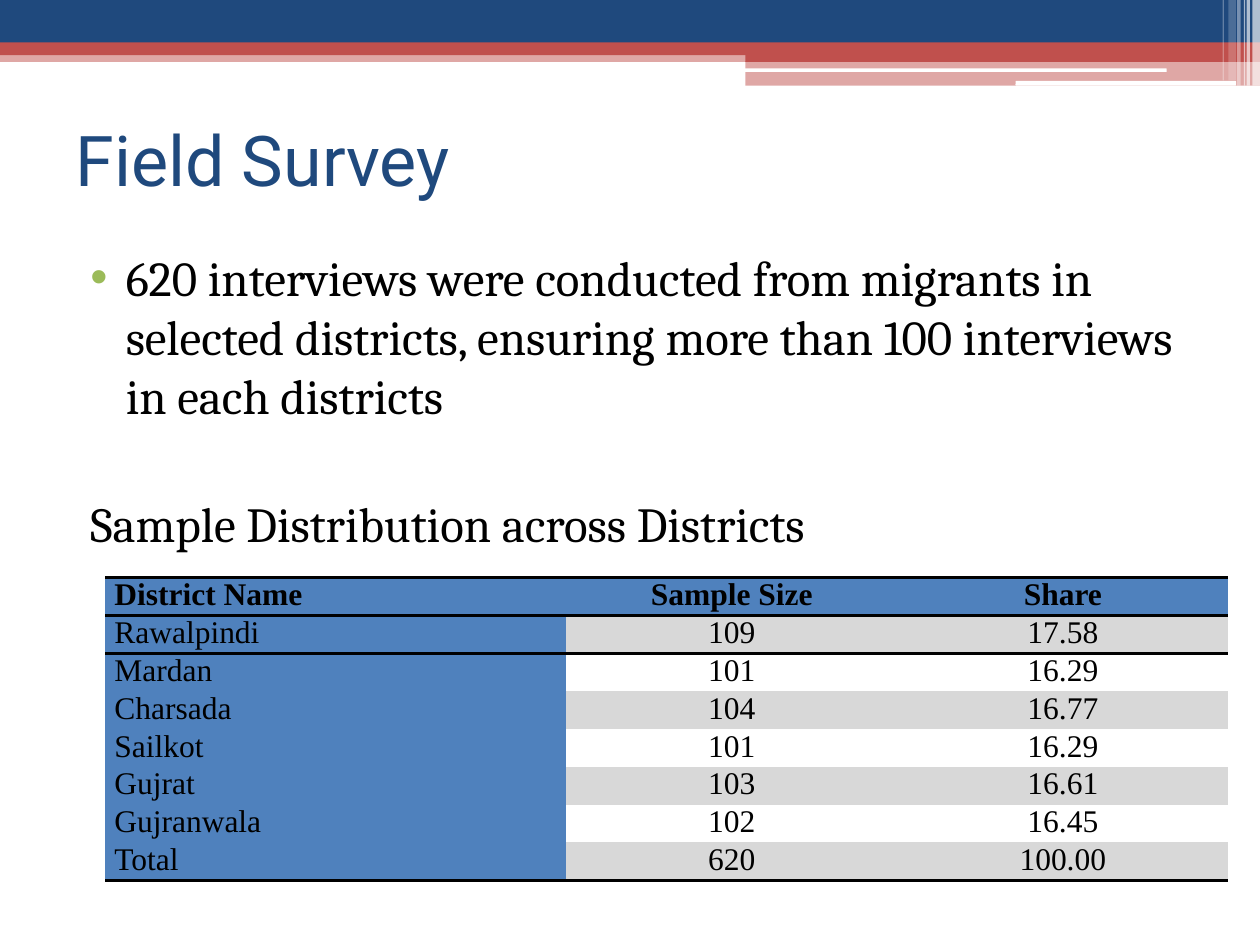
from dataclasses import dataclass

from lxml.etree import SubElement
from pptx import Presentation
from pptx.dml.color import RGBColor
from pptx.enum.shapes import MSO_SHAPE as Preset
from pptx.enum.text import MSO_ANCHOR as Anchor, PP_ALIGN as Align
from pptx.oxml.ns import qn
from pptx.util import Pt

NAVY, RED, BLUE = "1F497D", "C0504D", "4F81BD"
WHITE, BLACK, GREY, GREEN = "FFFFFF", "000000", "D8D8D8", "9BBB59"
PLAIN_TABLE = "{2D5ABB26-0587-4C30-8999-92F81FD0307C}"


def rgb(value):
    return RGBColor.from_string(value)


def points(*lengths):
    return [Pt(length) for length in lengths]


@dataclass
class SurveySlide:
    slide: object
    heading_font: str = "Roboto"
    body_font: str = "Cambria"
    table_font: str = "Times New Roman"

    def run(self, paragraph, text, font, size, color=BLACK, bold=False):
        run = paragraph.add_run()
        run.text = text
        run.font.name = font
        run.font.size = Pt(size)
        run.font.bold = bold
        run.font.color.rgb = rgb(color)

    def title(self, text, box):
        heading = self.slide.shapes.title
        heading.left, heading.top, heading.width, heading.height = points(*box)
        frame = heading.text_frame
        frame.vertical_anchor = Anchor.MIDDLE
        frame.paragraphs[0].alignment = Align.LEFT
        self.run(frame.paragraphs[0], text, self.heading_font, 40, NAVY)

    def bar(self, box, color, opacity=100, preset=Preset.RECTANGLE):
        bar = self.slide.shapes.add_shape(preset, *points(*box))
        bar.shadow.inherit = False
        bar.line.fill.background()
        bar.fill.solid()
        bar.fill.fore_color.rgb = rgb(color)
        if opacity < 100:
            tint = bar._element.spPr.find(".//" + qn("a:srgbClr"))
            SubElement(tint, qn("a:alpha"), val=str(opacity * 1000))

    def body(self, items, box):
        frame = self.slide.shapes.add_textbox(*points(*box)).text_frame
        frame.word_wrap = True
        for index, (text, space_before, bulleted) in enumerate(items):
            paragraph = frame.add_paragraph() if index else frame.paragraphs[0]
            paragraph.space_before = Pt(space_before)
            self.run(paragraph, text, self.body_font, 28)
            layout = paragraph._p.get_or_add_pPr()
            layout.set("marL", str(Pt(28.8)))
            layout.set("indent", str(Pt(-20.16)))
            if bulleted:
                bullet_color = SubElement(layout, qn("a:buClr"))
                SubElement(bullet_color, qn("a:srgbClr"), val=GREEN)
                SubElement(layout, qn("a:buFont"), typeface="Arial")
                SubElement(layout, qn("a:buChar"), char="•")

    def rule(self, cell, side):
        edge = SubElement(cell._tc.get_or_add_tcPr(), qn("a:ln" + side), w=str(Pt(2.25)))
        fill = SubElement(edge, qn("a:solidFill"))
        SubElement(fill, qn("a:srgbClr"), val=BLACK)

    def table(self, rows, left, top, widths, row_height):
        frame = self.slide.shapes.add_table(
            len(rows), len(widths),
            *points(left, top, sum(widths), row_height * len(rows)))
        grid = frame.table
        grid.first_row = grid.horz_banding = False
        grid._tbl.tblPr.find(qn("a:tableStyleId")).text = PLAIN_TABLE
        for column, width in zip(grid.columns, widths):
            column.width = Pt(width)
        last = len(rows) - 1
        for r, values in enumerate(rows):
            grid.rows[r].height = Pt(row_height)
            for c, value in enumerate(values):
                cell = grid.cell(r, c)
                cell.margin_left = cell.margin_right = Pt(5.4)
                cell.margin_top = cell.margin_bottom = 0
                if r in (0, 1):
                    self.rule(cell, "T")
                if r in (0, last):
                    self.rule(cell, "B")
                if r == 0 or c == 0:
                    shade = BLUE
                else:
                    shade = GREY if r % 2 else None
                if shade:
                    cell.fill.solid()
                    cell.fill.fore_color.rgb = rgb(shade)
                else:
                    cell.fill.background()
                paragraph = cell.text_frame.paragraphs[0]
                paragraph.alignment = Align.CENTER if c else Align.LEFT
                self.run(paragraph, value, self.table_font, 18, bold=r == 0)


def main():
    deck = Presentation()
    deck.slide_width, deck.slide_height = points(720, 540)
    survey = SurveySlide(deck.slides.add_slide(deck.slide_layouts[5]))

    for box, color, opacity in [
        ((0, 28.8, 720, 6.6), RED, 50),
        ((0, 0, 720, 24.5), NAVY, 100),
        ((0, 24.3, 720, 7.2), RED, 100),
        ((426, 28.2, 294, 7.2), RED, 100),
        ((426, 35, 294, 14), RED, 50),
    ]:
        survey.bar(box, color, opacity)

    for box in [(425.5, 39.1, 241.2, 2), (580.3, 46.2, 126, 2.7)]:
        survey.bar(box, WHITE, preset=Preset.ROUNDED_RECTANGLE)

    for left, width, height, opacity in [
        (715.6, 4.4, 49, 65),
        (712.3, 2, 49, 65),
        (710.8, 0.7, 49, 60),
        (707, 2, 49, 40),
        (702, 4.3, 46, 20),
        (698.7, 0.7, 46, 30),
    ]:
        survey.bar((left, 0, width, height), WHITE, opacity)

    survey.title("Field Survey", (36, 48.5, 648, 84))
    survey.body([
        ("620 interviews were conducted from migrants in selected districts, "
         "ensuring more than 100 interviews in each districts", 3, True),
        ("Sample Distribution across Districts", 39.5, False),
    ], (36, 138, 648, 380))
    survey.table([
        ("District Name", "Sample Size", "Share"),
        ("Rawalpindi", "109", "17.58"),
        ("Mardan", "101", "16.29"),
        ("Charsada", "104", "16.77"),
        ("Sailkot", "101", "16.29"),
        ("Gujrat", "103", "16.61"),
        ("Gujranwala", "102", "16.45"),
        ("Total", "620", "100.00"),
    ], 60, 330, (263.5, 189.25, 189.25), 20)

    deck.save("out.pptx")


if __name__ == "__main__":
    main()
